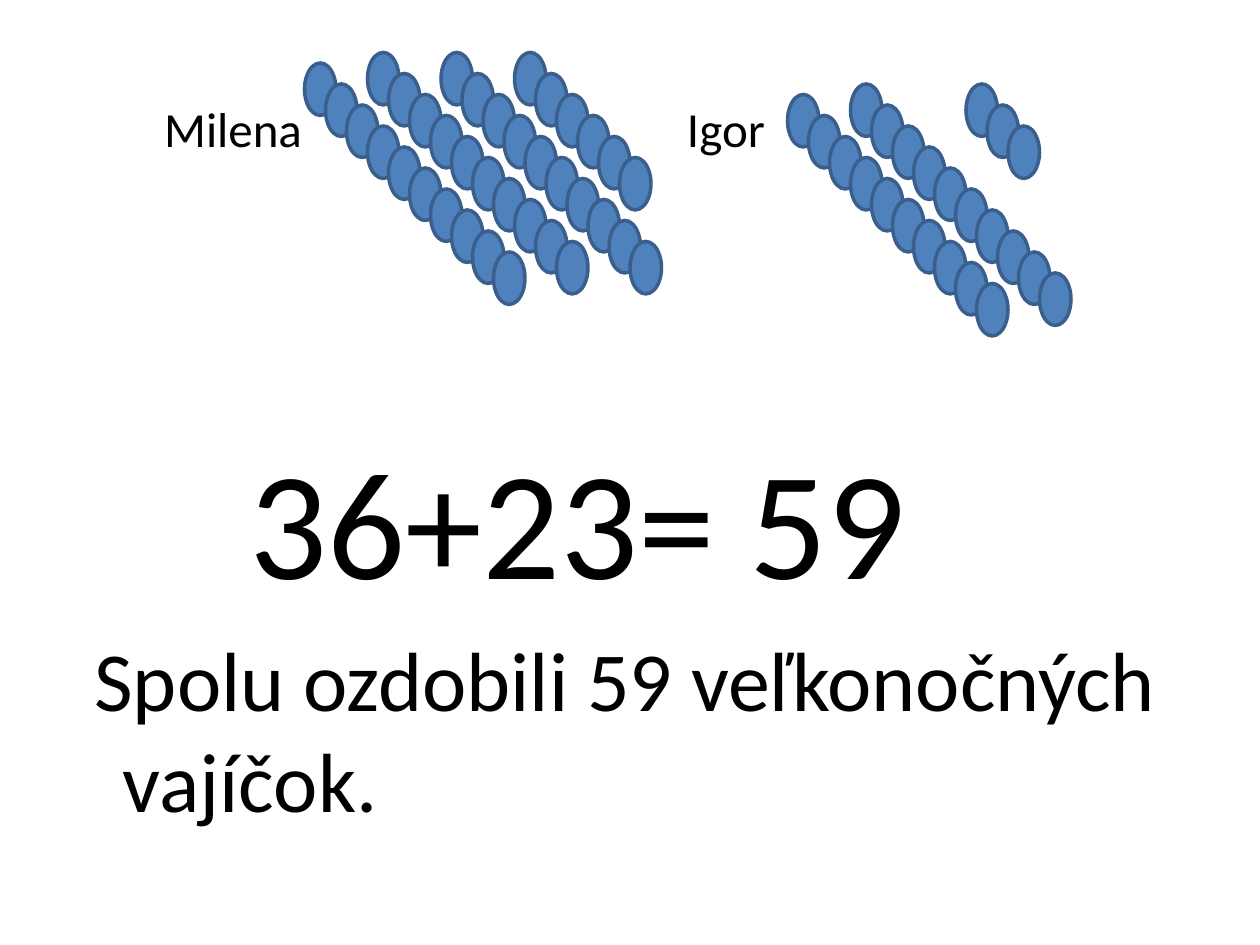
from lxml.etree import SubElement
from pptx import Presentation
from pptx.dml.color import RGBColor
from pptx.enum.shapes import MSO_SHAPE
from pptx.enum.text import MSO_ANCHOR, MSO_AUTO_SIZE, PP_ALIGN
from pptx.oxml.ns import qn
from pptx.util import Cm, Pt

COLORS = {"text": "000000", "egg": "4F81BD", "egg_line": "3A5F8C"}
STEP = 1.27 / 3
EGG_SIZE = (1.5, 2.5)


def move(shape, box):
    """Place a shape in a box of left, top, width and height in cm."""
    shape.left, shape.top, shape.width, shape.height = map(Cm, box)


def write(para, text, size, margin=0, indent=0):
    """Fill a paragraph with left-aligned text, without a bullet."""
    para.alignment = PP_ALIGN.LEFT
    props = para._p.get_or_add_pPr()
    props.set("marL", str(Cm(margin)))
    props.set("indent", str(Cm(indent)))
    SubElement(props, qn("a:buNone"))
    span = para.add_run()
    span.text = text
    span.font.name = "Calibri"
    span.font.size = Pt(size)
    span.font.color.rgb = RGBColor.from_string(COLORS["text"])


def add_name(shape, text, box, inset=0):
    """Put a child's name in a title or text box."""
    move(shape, box)
    frame = shape.text_frame
    frame.word_wrap = True
    frame.auto_size = MSO_AUTO_SIZE.NONE
    frame.vertical_anchor = MSO_ANCHOR.MIDDLE
    frame.margin_left, frame.margin_top = Cm(inset), Cm(0.59)
    write(frame.paragraphs[0], text, 28)


def add_answer(page, box):
    """Put the sum and the answer sentence in the body."""
    body = page.placeholders[1]
    move(body, box)
    frame = body.text_frame
    frame.auto_size = MSO_AUTO_SIZE.NONE
    write(frame.paragraphs[0], "36+23= 59", 88, margin=3.51)
    write(frame.add_paragraph(), "Spolu ozdobili 59 veľkonočných vajíčok.", 48,
          margin=0.95, indent=-0.57)


def add_eggs(page, origin, strands):
    """Draw diagonal strands of eggs, given in grid steps as x, y and count."""
    for x, y, count in strands:
        for i in range(count):
            egg = page.shapes.add_shape(MSO_SHAPE.OVAL, 0, 0, 0, 0)
            grid = (origin[0] + x + i, origin[1] + y + i, *EGG_SIZE)
            move(egg, [STEP * value for value in grid])
            egg.shadow.inherit = False
            egg.fill.solid()
            egg.fill.fore_color.rgb = RGBColor.from_string(COLORS["egg"])
            egg.line.color.rgb = RGBColor.from_string(COLORS["egg_line"])
            egg.line.width = Pt(2)


def main():
    """Build and save the slide."""
    deck = Presentation()
    deck.slide_width, deck.slide_height = Cm(25.4), Cm(19.05)
    page = deck.slides.add_slide(deck.slide_layouts[1])
    add_name(page.shapes.title, "Milena", (1.27, 0.76, 22.86, 3.18), inset=2.04)
    add_name(page.shapes.add_textbox(0, 0, 0, 0), "Igor", (13.85, 0.76, 2.2, 3.18))
    add_answer(page, (1.27, 8.46, 22.86, 8.56))
    add_eggs(page, (14.5, 2.5), [(0, 0.5, 10), (3, 0, 10), (6.5, 0, 10), (10, 0, 6)])
    add_eggs(page, (37.5, 4), [(3, 0, 10), (0, 0.5, 10), (8.5, 0, 3)])
    deck.save("out.pptx")


if __name__ == "__main__":
    main()
